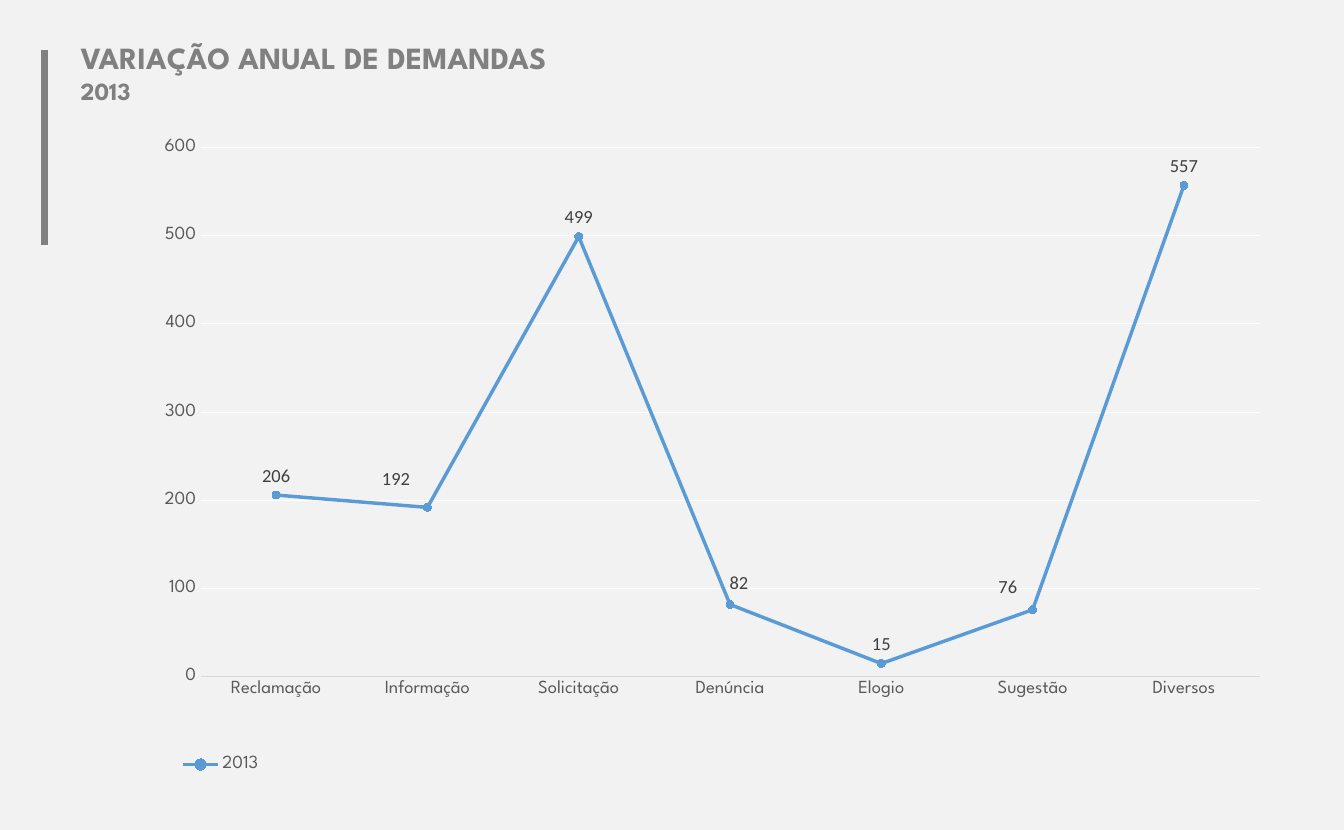
from lxml import etree
from pptx import Presentation
from pptx.chart.data import CategoryChartData
from pptx.dml.color import RGBColor
from pptx.enum.chart import (XL_CHART_TYPE, XL_LABEL_POSITION,
                             XL_LEGEND_POSITION, XL_MARKER_STYLE, XL_TICK_MARK)
from pptx.enum.shapes import MSO_CONNECTOR, MSO_SHAPE
from pptx.enum.text import MSO_ANCHOR
from pptx.oxml.ns import qn
from pptx.util import Inches, Pt

LINE = XL_CHART_TYPE.LINE_MARKERS
ABOVE = XL_LABEL_POSITION.ABOVE
BOTTOM = XL_LEGEND_POSITION.BOTTOM
CIRCLE = XL_MARKER_STYLE.CIRCLE
NO_TICK = XL_TICK_MARK.NONE
STRAIGHT = MSO_CONNECTOR.STRAIGHT
RECT = MSO_SHAPE.RECTANGLE
LOW = MSO_ANCHOR.BOTTOM

WIDTH, HEIGHT = 12.12, 538.8 / 72  # the height is 538.8 points
HEAD = "League Spartan"
BODY = "Calibri"
GRAY, BLUE, TEXT = "808080", "5B9BD5", "595959"

DEMANDS = {"Reclamação": 206, "Informação": 192, "Solicitação": 499,
           "Denúncia": 82, "Elogio": 15, "Sugestão": 76, "Diversos": 557}
# Label shifts as percent of the chart size, by point
SHIFTS = {1: (-2.8, -1.4), 3: (0.8, -0.3), 5: (-2.2, -0.5)}


def color(code):
    return RGBColor.from_string(code)


def style(font, size, code, name=HEAD, bold=None):
    font.size, font.name, font.bold = Pt(size), name, bold
    font.color.rgb = color(code)


def stroke(line, code, width):
    line.color.rgb = color(code)
    line.width = Pt(width)


def layout(parent, index, **parts):
    """Give a chart part a manual layout at its place in the XML."""
    for old in parent.findall(qn("c:layout")):
        parent.remove(old)
    node = etree.Element(qn("c:layout"))
    manual = etree.SubElement(node, qn("c:manualLayout"))
    for tag, val in parts.items():
        etree.SubElement(manual, qn("c:" + tag)).set("val", str(val))
    parent.insert(index, node)


def add_back(slide, left, top, width, height):
    back = slide.shapes.add_shape(RECT, Inches(left), Inches(top),
                                  Inches(width), Inches(height))
    back.shadow.inherit = False
    back.fill.solid()
    back.fill.fore_color.rgb = color("F2F2F2")
    back.line.fill.background()


def add_title(slide, left, top, width, height):
    # Side bar
    x, y = left - 0.23, top + 0.45
    bar = slide.shapes.add_connector(STRAIGHT, Inches(x), Inches(y),
                                     Inches(x), Inches(y + 1.76))
    stroke(bar.line, GRAY, 4.5)
    etree.SubElement(bar.element.spPr, qn("a:effectLst"))

    # Title and year
    box = slide.shapes.add_textbox(Inches(left), Inches(top),
                                   Inches(width), Inches(height))
    frame = box.text_frame
    frame.word_wrap = True
    frame.vertical_anchor = LOW
    frame.text = "VARIAÇÃO ANUAL DE DEMANDAS\n2013"
    for para, size in zip(frame.paragraphs, (20, 16)):
        style(para.font, size, GRAY, bold=True)


def add_demands(slide, left, top, width, height):
    data = CategoryChartData()
    data.categories = list(DEMANDS)
    data.add_series("2013", list(DEMANDS.values()))
    chart = slide.shapes.add_chart(LINE, Inches(left), Inches(top),
                                   Inches(width), Inches(height), data).chart
    style(chart.font, 10, "000000", BODY)
    chart.has_title = False

    # Axes
    cats, vals = chart.category_axis, chart.value_axis
    for axis in (cats, vals):
        axis.major_tick_mark = axis.minor_tick_mark = NO_TICK
        style(axis.tick_labels.font, 12, TEXT)
    stroke(cats.format.line, "D9D9D9", 0.75)
    vals.format.line.fill.background()
    vals.minimum_scale, vals.maximum_scale, vals.major_unit = 0, 600, 100
    stroke(vals.major_gridlines.format.line, "FFFFFF", 0.75)

    # Line and markers
    plot = chart.plots[0]
    plot.vary_by_categories = False
    series = plot.series[0]
    series.smooth = False
    stroke(series.format.line, BLUE, 2.25)
    marker = series.marker
    marker.style, marker.size = CIRCLE, 5
    marker.format.fill.solid()
    marker.format.fill.fore_color.rgb = color(BLUE)
    stroke(marker.format.line, BLUE, 0.75)

    # Value labels, without leader lines
    labels = series.data_labels
    labels.show_value = True
    labels.position = ABOVE
    style(labels.font, 12, "404040", BODY)
    for point in SHIFTS:
        label = series.points[point].data_label
        label.position = ABOVE
        style(label.font, 12, "404040", BODY)
    for node, (x, y) in zip(chart.element.iter(qn("c:dLbl")), SHIFTS.values()):
        layout(node, 1, x=x / 100, y=y / 100)
    for node in chart.element.iter(qn("c:showLeaderLines")):
        node.set("val", "0")

    # Legend
    chart.has_legend = True
    legend = chart.legend
    legend.position = BOTTOM
    legend.include_in_layout = False
    style(legend.font, 12, TEXT)
    layout(chart.element.find(".//" + qn("c:legend")), 1, xMode="edge",
           yMode="edge", x=0.03, y=0.93, w=0.09, h=0.06)

    # Plot area
    layout(chart.element.find(".//" + qn("c:plotArea")), 0,
           layoutTarget="inner", xMode="edge", yMode="edge",
           x=0.057, y=0.017, w=0.941, h=0.809)


def main():
    deck = Presentation()
    deck.slide_width, deck.slide_height = Inches(WIDTH), Inches(HEIGHT)
    slide = deck.slides.add_slide(deck.slide_layouts[6])
    add_back(slide, 0, 0, WIDTH, HEIGHT)
    add_title(slide, 0.63, 0, 6.3, 1)
    add_demands(slide, 1.23, 1.23, 10.15, 5.9)
    deck.save("out.pptx")


if __name__ == "__main__":
    main()
